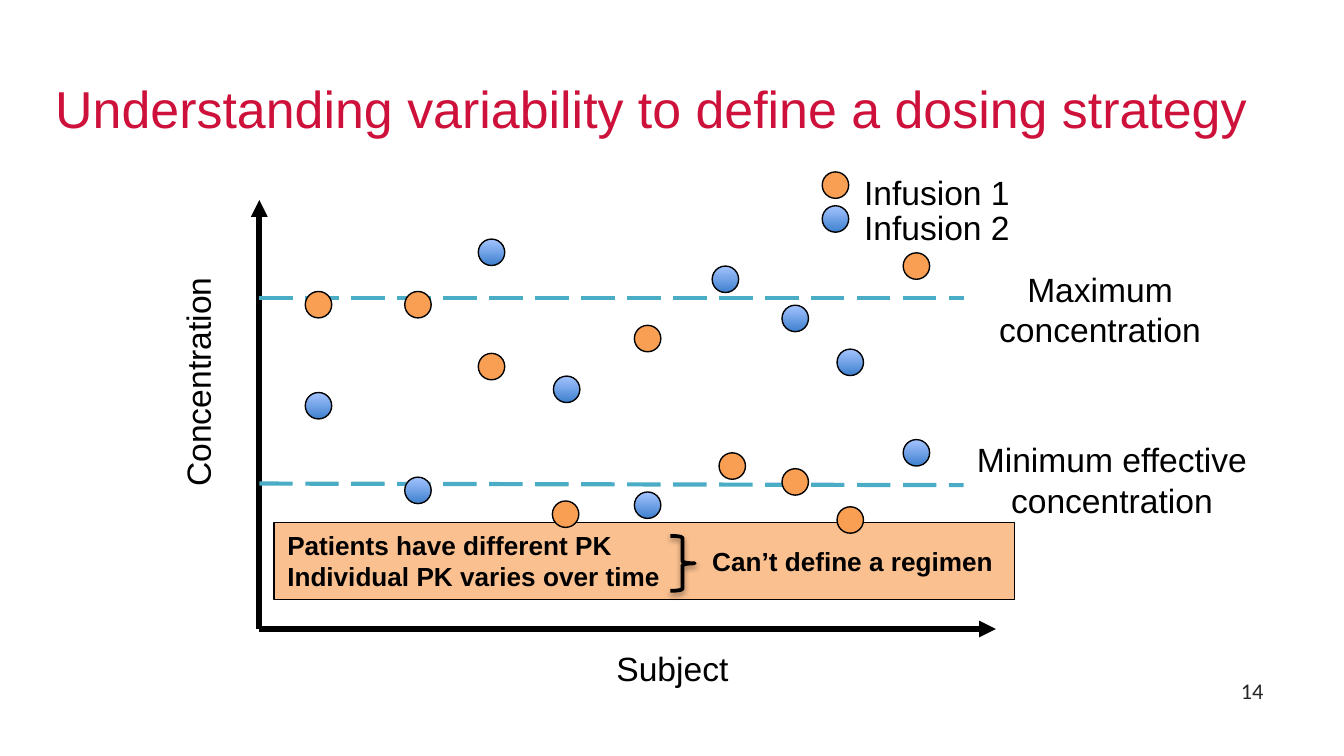
from dataclasses import dataclass
from lxml import etree
from pptx import Presentation
from pptx.dml.color import RGBColor
from pptx.enum.dml import MSO_LINE
from pptx.enum.shapes import MSO_CONNECTOR, MSO_SHAPE
from pptx.enum.text import MSO_ANCHOR, MSO_AUTO_SIZE, PP_ALIGN
from pptx.oxml.ns import qn
from pptx.util import Cm, Pt

STRAIGHT = MSO_CONNECTOR.STRAIGHT
OVAL, RECTANGLE, BRACE = MSO_SHAPE.OVAL, MSO_SHAPE.RECTANGLE, MSO_SHAPE.RIGHT_BRACE
LEFT, CENTER, RIGHT = PP_ALIGN.LEFT, PP_ALIGN.CENTER, PP_ALIGN.RIGHT
TOP, MIDDLE = MSO_ANCHOR.TOP, MSO_ANCHOR.MIDDLE
FIXED, GROW = MSO_AUTO_SIZE.NONE, MSO_AUTO_SIZE.SHAPE_TO_FIT_TEXT
LONG_DASH = MSO_LINE.LONG_DASH


@dataclass(frozen=True)
class Theme:
    font: str = "Arial"
    number_font: str = "Calibri"
    title: RGBColor = RGBColor(0xCD, 0x11, 0x3B)
    ink: RGBColor = RGBColor(0, 0, 0)
    number: RGBColor = RGBColor(0x26, 0x26, 0x26)
    limit: RGBColor = RGBColor(0x4B, 0xAC, 0xC6)
    orange: RGBColor = RGBColor(0xF9, 0x9F, 0x54)
    blue_dark: RGBColor = RGBColor(0x3F, 0x80, 0xCE)
    blue_light: RGBColor = RGBColor(0xA4, 0xC4, 0xFF)
    banner: RGBColor = RGBColor(0xFA, 0xC0, 0x90)
    title_size: float = 27.8
    label_size: float = 18
    banner_size: float = 14
    number_size: float = 12


theme = Theme()


def write(box, lines, size, align=LEFT, color=theme.ink, font=theme.font,
          bold=False, anchor=TOP, fit=GROW):
    frame = box.text_frame
    frame.word_wrap = True
    frame.auto_size = fit
    frame.vertical_anchor = anchor
    for index, line in enumerate(lines):
        para = frame.add_paragraph() if index else frame.paragraphs[0]
        para.alignment = align
        span = para.add_run()
        span.text = line
        span.font.name = font
        span.font.size = Pt(size)
        span.font.bold = bold
        span.font.color.rgb = color


def add_dot(shapes, left, top, series):
    dot = shapes.add_shape(OVAL, Cm(left), Cm(top), Cm(0.5), Cm(0.5))
    dot.shadow.inherit = False
    dot.line.color.rgb = theme.ink
    dot.line.width = Pt(0.75)
    if series == "Infusion 1":
        dot.fill.solid()
        dot.fill.fore_color.rgb = theme.orange
    else:
        dot.fill.gradient()
        dot.fill.gradient_angle = 90
        for stop, color in zip(dot.fill.gradient_stops, (theme.blue_dark, theme.blue_light)):
            stop.color.rgb = color


deck = Presentation()
deck.slide_width, deck.slide_height = Cm(25.4), Cm(14.29)
page = deck.slides.add_slide(deck.slide_layouts[5])

title = page.shapes.title
title.left, title.top, title.width, title.height = Cm(0.79), Cm(1.32), Cm(23.83), Cm(2.01)
write(title, ["Understanding variability to define a dosing strategy"],
      theme.title_size, color=theme.title, fit=FIXED)

number = page.shapes.add_textbox(Cm(18.21), Cm(12.67), Cm(5.92), Cm(0.76))
write(number, ["14"], theme.number_size, RIGHT, theme.number, theme.number_font,
      anchor=MIDDLE, fit=FIXED)

origin_x, origin_y, limit_end = 4.9, 11.89, 18.21
chart_lines = [
    (origin_x, 3.78, origin_x, origin_y, "axis"),
    (18.82, origin_y, origin_x, origin_y, "axis"),
    (origin_x, 5.64, limit_end, 5.64, "limit"),
    (origin_x, 9.14, limit_end, 9.17, "limit"),
]
for start_x, start_y, end_x, end_y, role in chart_lines:
    connector = page.shapes.add_connector(STRAIGHT, Cm(start_x), Cm(start_y), Cm(end_x), Cm(end_y))
    if role == "axis":
        connector.line.color.rgb = theme.ink
        connector.line.width = Pt(3)
        etree.SubElement(connector.line._get_or_add_ln(), qn("a:headEnd"), type="triangle")
    else:
        connector.line.color.rgb = theme.limit
        connector.line.width = Pt(2.25)
        connector.line.dash_style = LONG_DASH
    etree.SubElement(connector._element.spPr, qn("a:effectLst"))

labels = [
    ("Concentration", 1.32, 6.71, 4.83, 1.02, CENTER, 270),
    ("Subject", 10.92, 12.12, 3.58, 1.02, CENTER, 0),
    ("Minimum effective concentration", limit_end, 8.18, 5.61, 1.8, CENTER, 0),
    ("Maximum concentration", limit_end, 4.95, 5.16, 1.8, CENTER, 0),
    ("Infusion 1", 16.08, 3.12, 3.58, 1.02, LEFT, 0),
    ("Infusion 2", 16.08, 3.78, 3.58, 1.02, LEFT, 0),
]
for text, left, top, width, height, align, turn in labels:
    label = page.shapes.add_textbox(Cm(left), Cm(top), Cm(width), Cm(height))
    label.rotation = turn
    write(label, [text], theme.label_size, align)

for series, top in (("Infusion 1", 3.25), ("Infusion 2", 3.89)):
    add_dot(page.shapes, 15.54, top, series)

banner = page.shapes.add_shape(RECTANGLE, Cm(5.18), Cm(9.88), Cm(14), Cm(1.45))
banner.shadow.inherit = False
banner.fill.solid()
banner.fill.fore_color.rgb = theme.banner
banner.line.color.rgb = theme.ink
banner.line.width = Pt(0.75)
write(banner, ["Patients have different PK", "Individual PK varies over time"],
      theme.banner_size, bold=True)

brace = page.shapes.add_shape(BRACE, Cm(12.67), Cm(10.13), Cm(0.46), Cm(1.04))
brace.fill.background()
brace.line.color.rgb = theme.ink
brace.line.width = Pt(2)
effects = etree.SubElement(brace._element.spPr, qn("a:effectLst"))
shadow = etree.SubElement(effects, qn("a:outerShdw"), blurRad=str(Pt(3.1)),
                          dist=str(Pt(1.6)), dir="5400000", rotWithShape="0")
shade = etree.SubElement(shadow, qn("a:srgbClr"), val=str(theme.ink))
etree.SubElement(shade, qn("a:alpha"), val="38000")

conclusion = page.shapes.add_textbox(Cm(13.21), Cm(10.19), Cm(7.82), Cm(0.86))
write(conclusion, ["Can’t define a regimen"], theme.banner_size, bold=True)

measurements = {
    "Infusion 1": [(5.77, 5.51), (7.65, 5.51), (9.04, 6.68), (10.44, 9.47), (11.99, 6.15),
                   (13.59, 8.56), (14.78, 8.86), (15.82, 9.58), (17.07, 4.78)],
    "Infusion 2": [(5.77, 7.42), (7.65, 9.02), (9.04, 4.52), (10.46, 7.11), (11.99, 9.3),
                   (13.46, 5.03), (14.78, 5.77), (15.82, 6.6), (17.07, 8.31)],
}
scatter = page.shapes.add_group_shape()
for series, points in measurements.items():
    for left, top in points:
        add_dot(scatter.shapes, left, top, series)

deck.save("out.pptx")
